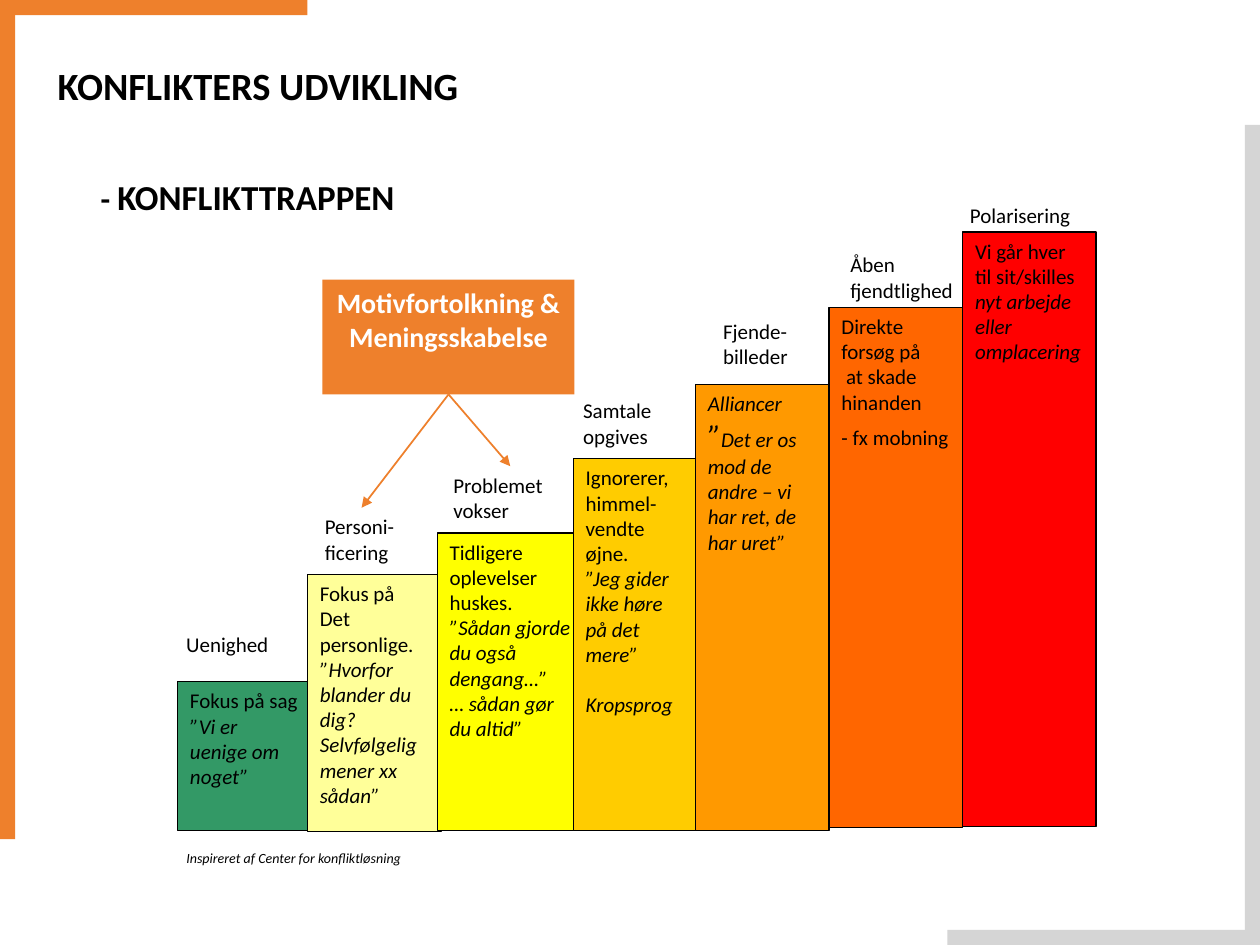
from lxml import etree
from pptx import Presentation, util as u
from pptx.dml.color import RGBColor
from pptx.enum import shapes, text
from pptx.oxml import ns

COLS, ROWS = 100, 75
CELL = u.Inches(0.1)
FONT = "Calibri"
BLACK = RGBColor(0x00, 0x00, 0x00)
WHITE = RGBColor(0xFF, 0xFF, 0xFF)
ORANGE = RGBColor(0xEE, 0x80, 0x2C)
GREY = RGBColor(0xD5, 0xD5, 0xD5)
GREEN = RGBColor(0x33, 0x99, 0x66)
PALE = RGBColor(0xFF, 0xFF, 0x99)
YELLOW = RGBColor(0xFF, 0xFF, 0x00)
GOLD = RGBColor(0xFF, 0xCC, 0x00)
AMBER = RGBColor(0xFF, 0x99, 0x00)
FLAME = RGBColor(0xFF, 0x66, 0x00)
RED = RGBColor(0xFF, 0x00, 0x00)

# Each step: left, top, width, height, fill, plain lines, italic lines,
# points above the last line, label lines, label offset.
STEPS = [
    (0, 38.5, 10.6, 11.8, GREEN, ["Fokus på sag"],
     ["”Vi er", "uenige om", "noget”"], 0, ["Uenighed"], (-0.3, -4.5)),
    (10.3, 30, 10.6, 20.4, PALE, ["Fokus på", "Det", "personlige."],
     ["”Hvorfor", "blander du", "dig?", "Selvfølgelig", "mener xx", "sådan”"],
     0, ["Personi-", "ficering"], (0.4, -5.3)),
    (20.6, 26.7, 10.8, 23.6, YELLOW, ["Tidligere", "oplevelser", "huskes."],
     ["”Sådan gjorde", "du også", "dengang…”", "… sådan gør", "du altid”"],
     0, ["Problemet", "vokser"], (0.3, -5.3)),
    (31.4, 20.8, 10.6, 29.5, GOLD,
     ["Ignorerer,", "himmel-", "vendte", "øjne."],
     ["”Jeg gider", "ikke høre", "på det", "mere”", "Kropsprog"],
     14.6, ["Samtale", "opgives"], (-0.2, -5.3)),
    (41.1, 14.9, 10.6, 35.4, AMBER, [],
     ["Alliancer", ("”", "Det er os"), "mod de", "andre – vi", "har ret, de",
      "har uret”"], 0, ["Fjende-", "billeder"], (1.2, -5.7)),
    (51.7, 8.8, 10.6, 41.3, FLAME,
     ["Direkte", "forsøg på", " at skade", "hinanden", "- fx mobning"],
     [], 6, ["Åben", "fjendtlighed"], (0.7, -4.9)),
    (62.3, 2.8, 10.6, 47.2, RED, ["Vi går hver", "til sit/skilles"],
     ["nyt arbejde", "eller", "omplacering"], 0, ["Polarisering"],
     (-0.4, -2.8)),
]


def grid(*cells):
    """Turn grid columns and rows into slide lengths."""
    return [round(cell * CELL) for cell in cells]


def block(slide, box, fill, edge=None):
    """Place a flat rectangle, outlined if an edge colour is given."""
    shape = slide.shapes.add_shape(shapes.MSO_SHAPE.RECTANGLE, *grid(*box))
    shape.shadow.inherit = False
    shape.fill.solid()
    shape.fill.fore_color.rgb = fill
    if edge is None:
        shape.line.fill.background()
    else:
        shape.line.color.rgb = edge
        shape.line.width = u.Pt(0.75)
    return shape


def write(frame, lines, size=12, head=18, ink=BLACK, bold=False, slant=None,
          align=text.PP_ALIGN.LEFT, wrap=True):
    """Fill a frame; a pair is a head run and its rest, lines from slant on are italic."""
    frame.word_wrap = wrap
    frame.vertical_anchor = text.MSO_ANCHOR.TOP
    for row, line in enumerate(lines):
        para = frame.paragraphs[0] if row == 0 else frame.add_paragraph()
        para.alignment = align
        parts = [line] if isinstance(line, str) else line
        for place, part in enumerate(parts):
            run = para.add_run()
            run.text = part
            font = run.font
            font.name, font.bold = FONT, bold
            font.size = u.Pt(head if place < len(parts) - 1 else size)
            font.color.rgb = ink
            font.italic = slant is not None and row >= slant


def label(slide, box, lines, **style):
    """Place a text box with the given lines."""
    frame = slide.shapes.add_textbox(*grid(*box)).text_frame
    frame.margin_right = 0
    write(frame, lines, **style)


def border(slide, box):
    """Draw the orange and grey corner bars inside the box."""
    x, y, w, h = box
    bar, arm = 1.2, 23.6
    block(slide, (x + w - bar, y + 9.9, bar, h - 9.9), GREY)
    block(slide, (x, y, bar, h - 8.4), ORANGE)
    block(slide, (x + 0.8, y, arm, bar), ORANGE)
    block(slide, (x + w - bar - arm, y + h - bar, arm, bar), GREY)


def titles(slide, box):
    """Write the title and the subtitle below it."""
    x, y, w, h = box
    label(slide, (x, y, w, 4.7), ["KONFLIKTERS UDVIKLING"], size=22, bold=True)
    label(slide, (x + 3.4, y + h - 4.4, 30, 4.4), [("- ", "KONFLIKTTRAPPEN")],
          size=20, bold=True)


def stairs(slide, box):
    """Build the coloured steps with their labels and the credit."""
    x, y, w, h = box
    for left, top, wide, high, fill, plain, slant, gap, *_ in STEPS:
        step = block(slide, (x + left, y + top, wide, high), fill, BLACK)
        frame = step.text_frame
        write(frame, plain + slant, slant=len(plain), wrap=False)
        if gap:
            frame.paragraphs[-1].space_before = u.Pt(gap)
    for left, top, *_, name, (dx, dy) in STEPS:
        label(slide, (x + left + dx, y + top + dy, 11, 1 + 2 * len(name)), name)
    label(slide, (x - 0.3, y + h, 33.9, 2.4),
          ["Inspireret af Center for konfliktløsning"], size=8, slant=0)


def callout(slide, box):
    """Place the orange callout and its two arrows."""
    x, y, w, h = box
    note = block(slide, (x, y, w, 9.1), ORANGE)
    write(note.text_frame, ["Motivfortolkning &", "Meningsskabelse"], size=16,
          ink=WHITE, bold=True, align=text.PP_ALIGN.CENTER)
    for dx, dy in ((3.1, h), (14.9, 14.8)):
        arrow = slide.shapes.add_connector(
            shapes.MSO_CONNECTOR.STRAIGHT,
            *grid(x + w / 2, y + 9.1, x + dx, y + dy))
        arrow.begin_connect(note, 2)
        arrow.line.color.rgb = ORANGE
        arrow.line.width = u.Pt(1)
        etree.SubElement(arrow.get_or_add_ln(), ns.qn("a:tailEnd"),
                         type="triangle")
        etree.SubElement(arrow.element.spPr, ns.qn("a:effectLst"))


def main():
    """Build and save the slide."""
    deck = Presentation()
    deck.slide_width, deck.slide_height = grid(COLS, ROWS)
    slide = deck.slides.add_slide(deck.slide_layouts[6])
    border(slide, (0, 0, COLS, ROWS))
    stairs(slide, (14.1, 15.6, 72.9, 51.3))
    titles(slide, (3.6, 4.4, 88.1, 13.4))
    callout(slide, (25.6, 22.2, 20, 18.1))
    deck.save("out.pptx")


if __name__ == "__main__":
    main()
